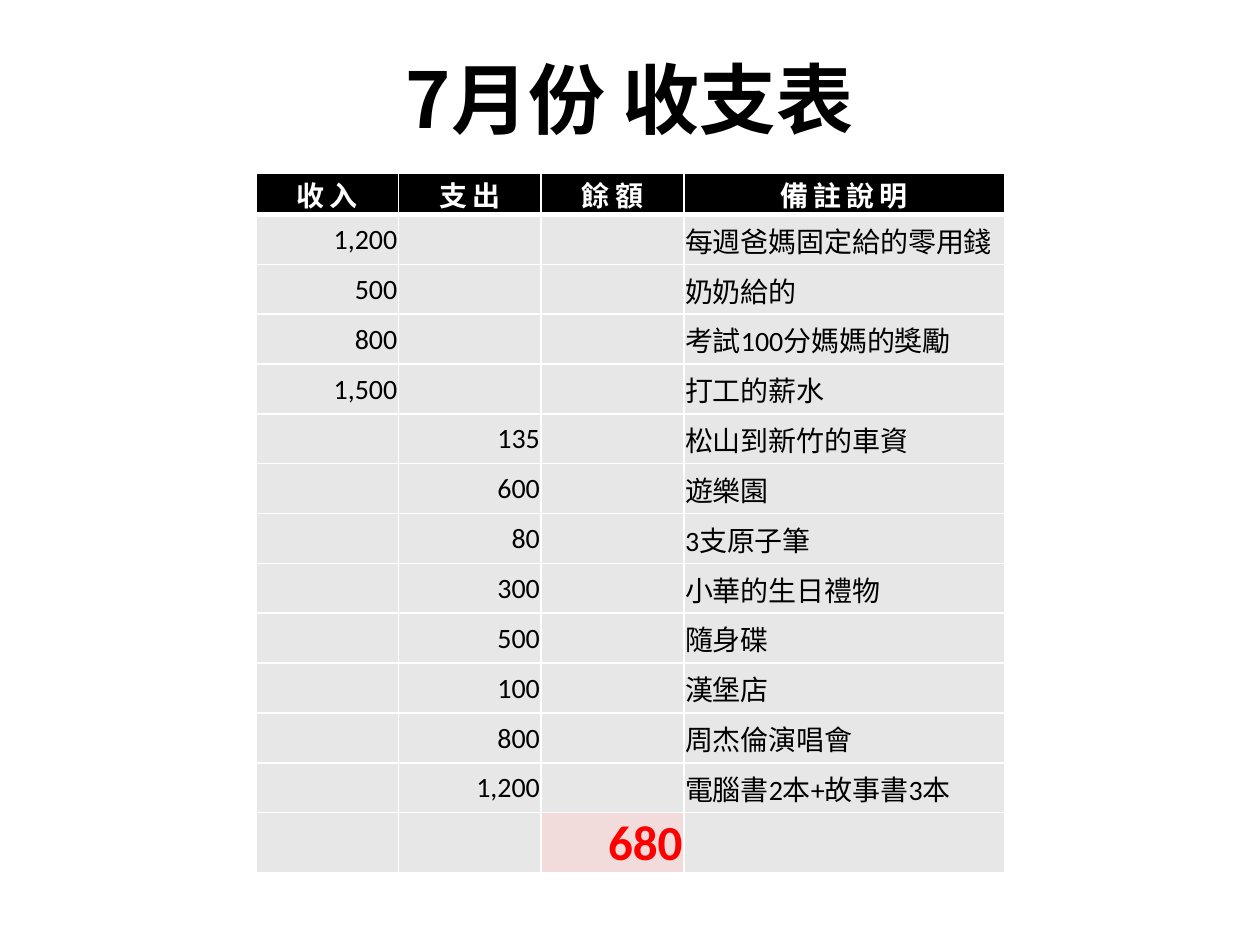
from dataclasses import dataclass

from lxml import etree
from pptx import Presentation
from pptx.dml.color import RGBColor
from pptx.enum import text as t
from pptx.oxml import ns
from pptx.util import Pt

LEFT, MID, RIGHT = t.PP_ALIGN.LEFT, t.PP_ALIGN.CENTER, t.PP_ALIGN.RIGHT
CJK = "Noto Sans CJK SC"
COLS = [81.5, 81.5, 81.5, 183.5]
HEAD, ROW, LAST = 23.5, 28.5, 34.5
HEADS = ["收入", "支出", "餘額", "備註說明"]
INCOME = [
    ("1,200", "每週爸媽固定給的零用錢"),
    ("500", "奶奶給的"),
    ("800", "考試100分媽媽的獎勵"),
    ("1,500", "打工的薪水"),
]
SPEND = [
    ("135", "松山到新竹的車資"),
    ("600", "遊樂園"),
    ("80", "3支原子筆"),
    ("300", "小華的生日禮物"),
    ("500", "隨身碟"),
    ("100", "漢堡店"),
    ("800", "周杰倫演唱會"),
    ("1,200", "電腦書2本+故事書3本"),
]


@dataclass
class Style:
    size: float = 16
    color: str = "000000"
    bold: bool = False
    align: t.PP_ALIGN = LEFT
    font: str = "Calibri"
    track: float = 0


@dataclass
class Entry:
    text: str
    style: Style
    fill: str = "E7E7E7"
    base: float = 1


def rgb(code: str) -> RGBColor:
    return RGBColor.from_string(code)


def assign(item, values: dict) -> None:
    for name, value in values.items():
        setattr(item, name, value)


def write(para, words: str, style: Style) -> None:
    para.alignment = style.align
    run = para.add_run()
    run.text = words
    assign(run.font, {"size": Pt(style.size), "bold": style.bold, "name": style.font})
    run.font.color.rgb = rgb(style.color)
    props = run.font._element
    props.set("spc", str(int(style.track * 100)))
    etree.SubElement(props, ns.qn("a:ea")).set("typeface", CJK)


def border(cell, base: float) -> None:
    """Rule all four sides in white, the lower one at the given width."""
    props = cell._tc.get_or_add_tcPr()
    for side, width in {"L": 1, "R": 1, "T": 1, "B": base}.items():
        line = etree.SubElement(props, ns.qn(f"a:ln{side}"), w=str(Pt(width)))
        fill = etree.SubElement(line, ns.qn("a:solidFill"))
        etree.SubElement(fill, ns.qn("a:srgbClr"), val="FFFFFF")


def draw(cell, entry: Entry) -> None:
    assign(cell, {
        "margin_left": Pt(0.75), "margin_right": Pt(0.75),
        "margin_top": Pt(0.75), "margin_bottom": Pt(0),
        "vertical_anchor": t.MSO_ANCHOR.MIDDLE,
    })
    border(cell, entry.base)
    cell.fill.solid()
    cell.fill.fore_color.rgb = rgb(entry.fill)
    if entry.text:
        write(cell.text_frame.paragraphs[0], entry.text, entry.style)


def entries() -> list[list[Entry]]:
    head = Style(color="FFFFFF", bold=True, align=MID, track=3)
    cash, note = Style(align=RIGHT), Style()
    total = Style(size=28, color="FF0000", bold=True, align=RIGHT)
    none = Entry("", note)
    rows = [[Entry(word, head, "000000", 3) for word in HEADS]]
    rows += [[Entry(sum_, cash), none, none, Entry(why, note)] for sum_, why in INCOME]
    rows += [[none, Entry(sum_, cash), none, Entry(why, note)] for sum_, why in SPEND]
    rows.append([none, none, Entry("680", total, "F2DCDB"), none])
    return rows


def add_title(slide) -> None:
    box = slide.shapes.add_textbox(Pt(49.5), Pt(28.5), Pt(621), Pt(58))
    frame = box.text_frame
    assign(frame, {"word_wrap": True, "vertical_anchor": t.MSO_ANCHOR.BOTTOM})
    para = frame.paragraphs[0]
    para.line_spacing = 0.9
    write(para, "7月份 收支表", Style(44, bold=True, align=MID, font=CJK))


def add_ledger(slide) -> None:
    rows = entries()
    tall = [HEAD] + [ROW] * (len(rows) - 2) + [LAST]
    table = slide.shapes.add_table(
        len(rows), len(COLS), Pt(146.25), Pt(99), Pt(sum(COLS)), Pt(sum(tall))
    ).table
    table.horz_banding = False
    for col, width in zip(table.columns, COLS):
        col.width = Pt(width)
    for line, height, row in zip(table.rows, tall, rows):
        line.height = Pt(height)
        for cell, entry in zip(line.cells, row):
            draw(cell, entry)


def main() -> None:
    deck = Presentation()
    assign(deck, {"slide_width": Pt(720), "slide_height": Pt(540)})
    slide = deck.slides.add_slide(deck.slide_layouts[6])
    add_title(slide)
    add_ledger(slide)
    deck.save("out.pptx")


if __name__ == "__main__":
    main()
